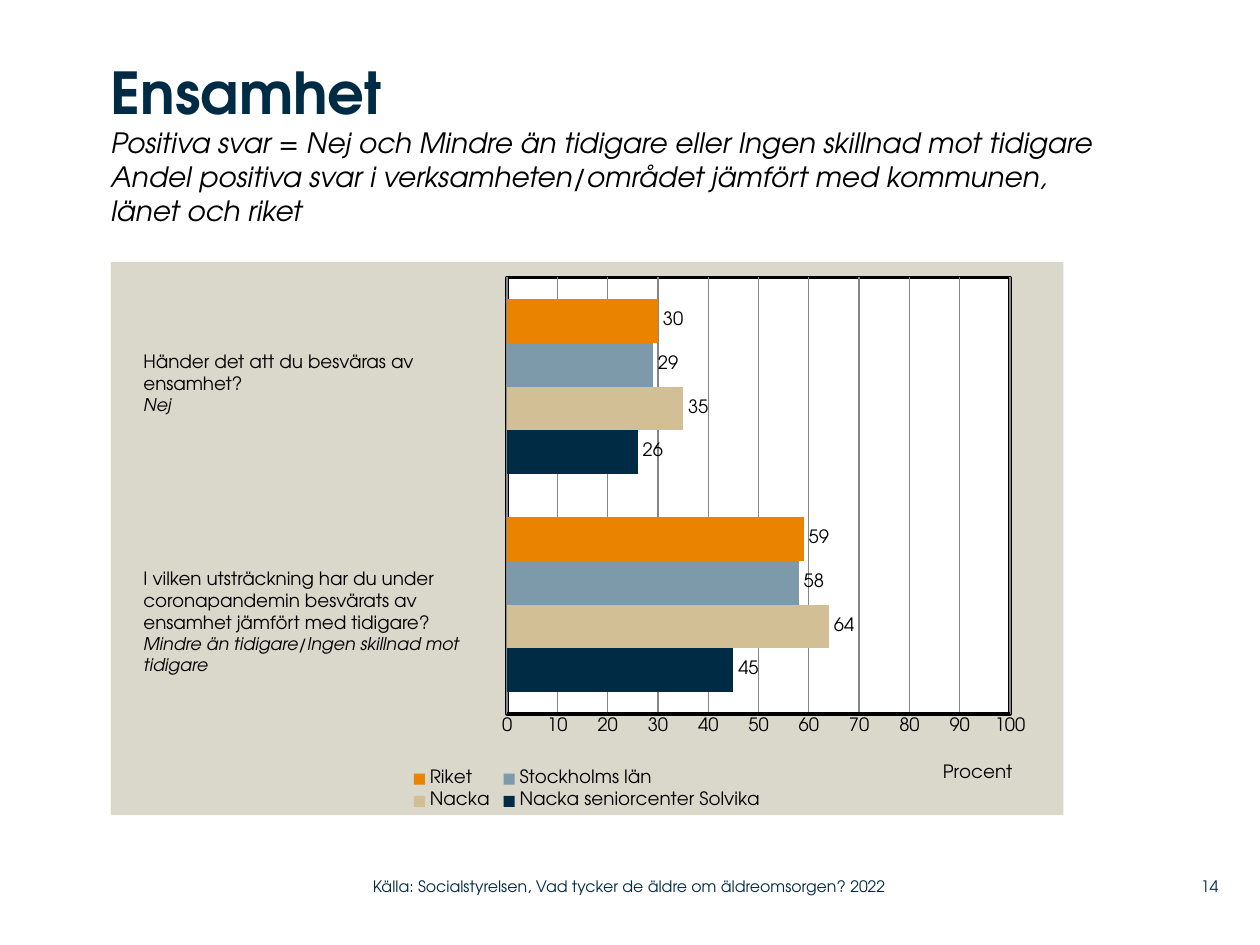
"""Build the Ensamhet slide comparing positive answers by area."""
from pptx import Presentation
from pptx.chart.data import CategoryChartData
from pptx.dml.color import RGBColor
from pptx.enum.chart import XL_CHART_TYPE, XL_LABEL_POSITION, XL_LEGEND_POSITION, XL_TICK_MARK
from pptx.enum.text import MSO_ANCHOR, MSO_AUTO_SIZE, PP_ALIGN
from pptx.oxml import parse_xml
from pptx.oxml.ns import nsdecls, qn
from pptx.util import Inches, Pt

FONT = "TeX Gyre Adventor"
COLORS = {"navy": "002B45", "sand": "D3BF96", "blue": "7D9AAA", "orange": "E98300",
          "panel": "DAD7CB", "white": "FFFFFF", "black": "000000", "grid": "868686"}


def style(font, size, color="black", bold=False, italic=False):
    font.name, font.size, font.bold, font.italic = FONT, Pt(size), bold, italic
    font.color.rgb = RGBColor.from_string(COLORS[color])


def place(parent, index, x, y, w=None, h=None, target=""):
    for layout in parent.findall(qn("c:layout")):
        parent.remove(layout)
    sizes = "" if w is None else f'<c:w val="{w}"/><c:h val="{h}"/>'
    parent.insert(index, parse_xml(
        f'<c:layout {nsdecls("c")}><c:manualLayout>{target}<c:xMode val="edge"/>'
        f'<c:yMode val="edge"/><c:x val="{x}"/><c:y val="{y}"/>{sizes}'
        '</c:manualLayout></c:layout>'))


prs = Presentation()
prs.slide_width, prs.slide_height = Inches(10), Inches(7.5)
slide = prs.slides.add_slide(prs.slide_layouts[5])

heading = slide.shapes.title
heading.left, heading.top = Inches(0.88), Inches(0.45)
heading.width, heading.height = Inches(7.81), Inches(1.64)
frame = heading.text_frame
frame.margin_left = frame.margin_right = frame.margin_top = frame.margin_bottom = 0
frame.word_wrap, frame.auto_size = True, MSO_AUTO_SIZE.NONE
frame.vertical_anchor = MSO_ANCHOR.TOP
paragraph = frame.paragraphs[0]
paragraph.alignment = PP_ALIGN.LEFT
run = paragraph.add_run()
run.text = "Ensamhet"
style(run.font, 33, "navy", bold=True)
for line in ("Positiva svar = Nej och Mindre än tidigare eller Ingen skillnad mot tidigare",
             "Andel positiva svar i verksamheten/området jämfört med kommunen, länet och riket"):
    paragraph.add_line_break()
    run = paragraph.add_run()
    run.text = line
    style(run.font, 16, italic=True)

areas = [("Nacka seniorcenter Solvika", (45, 26), "navy"), ("Nacka", (64, 35), "sand"),
         ("Stockholms län", (58, 29), "blue"), ("Riket", (59, 30), "orange")]
answers = CategoryChartData(number_format="0")
answers.categories = ["1", "2"]
for name, values, _ in areas:
    answers.add_series(name, values)
chart = slide.shapes.add_chart(XL_CHART_TYPE.BAR_CLUSTERED, Inches(0.88), Inches(2.08),
                               Inches(7.56), Inches(4.39), answers).chart
style(chart.font, 10.5)
chart.has_title = False

bars = chart.plots[0]
bars.gap_width, bars.overlap, bars.vary_by_categories = 100, 0, False
for series, (_, _, color) in zip(bars.series, areas):
    series.format.fill.solid()
    series.format.fill.fore_color.rgb = RGBColor.from_string(COLORS[color])
    series.invert_if_negative = False
    labels = series.data_labels
    labels.show_value = True
    labels.position = XL_LABEL_POSITION.OUTSIDE_END
    style(labels.font, 10.5)

chart.category_axis.visible = False
percent = chart.value_axis
percent.minimum_scale, percent.maximum_scale, percent.major_unit = 0, 100, 10
percent.major_tick_mark = percent.minor_tick_mark = XL_TICK_MARK.NONE
percent.has_major_gridlines = True
for line, color, width in ((percent.format.line, "black", 2),
                           (percent.major_gridlines.format.line, "grid", 0.75)):
    line.color.rgb = RGBColor.from_string(COLORS[color])
    line.width = Pt(width)
style(percent.tick_labels.font, 10.5)
unit = percent.axis_title.text_frame.paragraphs[0].add_run()
unit.text = "Procent"
style(unit.font, 10.5)
place(percent.axis_title.element if hasattr(percent.axis_title, "element")
      else percent.axis_title._element, 1, 0.87, 0.9)

chart.has_legend = True
chart.legend.position = XL_LEGEND_POSITION.BOTTOM
chart.legend.include_in_layout = False
style(chart.legend.font, 10.5)
place(chart.element.find(".//" + qn("c:legend")), 1, 0.31, 0.91, 0.38, 0.09)

plot_area = chart.element.find(".//" + qn("c:plotArea"))
place(plot_area, 0, 0.416, 0.028, 0.528, 0.789, '<c:layoutTarget val="inner"/>')
solid = '<a:solidFill><a:srgbClr val="{}"/></a:solidFill>'
for fill, border, attach in (
        ("white", f'<a:ln w="25400">{solid.format(COLORS["black"])}</a:ln>', plot_area.append),
        ("panel", "<a:ln><a:noFill/></a:ln>", chart.element.find(qn("c:chart")).addnext)):
    attach(parse_xml(f'<c:spPr {nsdecls("c", "a")}>{solid.format(COLORS[fill])}{border}</c:spPr>'))

questions = [
    (4.45, 0.97, [("I vilken utsträckning har du under coronapandemin besvärats av "
                   "ensamhet jämfört med tidigare?", False),
                  ("Mindre än tidigare/Ingen skillnad mot tidigare", True)]),
    (2.73, 0.63, [("Händer det att du besväras av", False), ("ensamhet?", False), ("Nej", True)])]
for top, height, lines in questions:
    frame = slide.shapes.add_textbox(Inches(1.04), Inches(top), Inches(2.94),
                                     Inches(height)).text_frame
    frame.word_wrap = True
    for index, (text, is_answer) in enumerate(lines):
        paragraph = frame.add_paragraph() if index else frame.paragraphs[0]
        run = paragraph.add_run()
        run.text = text
        style(run.font, 10 if is_answer else 10.5, italic=is_answer)

footers = [(2.96, 4.43, "Källa: Socialstyrelsen, Vad tycker de äldre om äldreomsorgen? 2022",
            PP_ALIGN.LEFT),
           (9.2, 0.47, "14", PP_ALIGN.RIGHT)]
for left, width, text, alignment in footers:
    frame = slide.shapes.add_textbox(Inches(left), Inches(6.89), Inches(width),
                                     Inches(0.29)).text_frame
    frame.margin_left = frame.margin_right = frame.margin_top = frame.margin_bottom = 0
    frame.word_wrap, frame.vertical_anchor = True, MSO_ANCHOR.MIDDLE
    paragraph = frame.paragraphs[0]
    paragraph.alignment = alignment
    run = paragraph.add_run()
    run.text = text
    style(run.font, 9, "navy")

prs.save("out.pptx")
